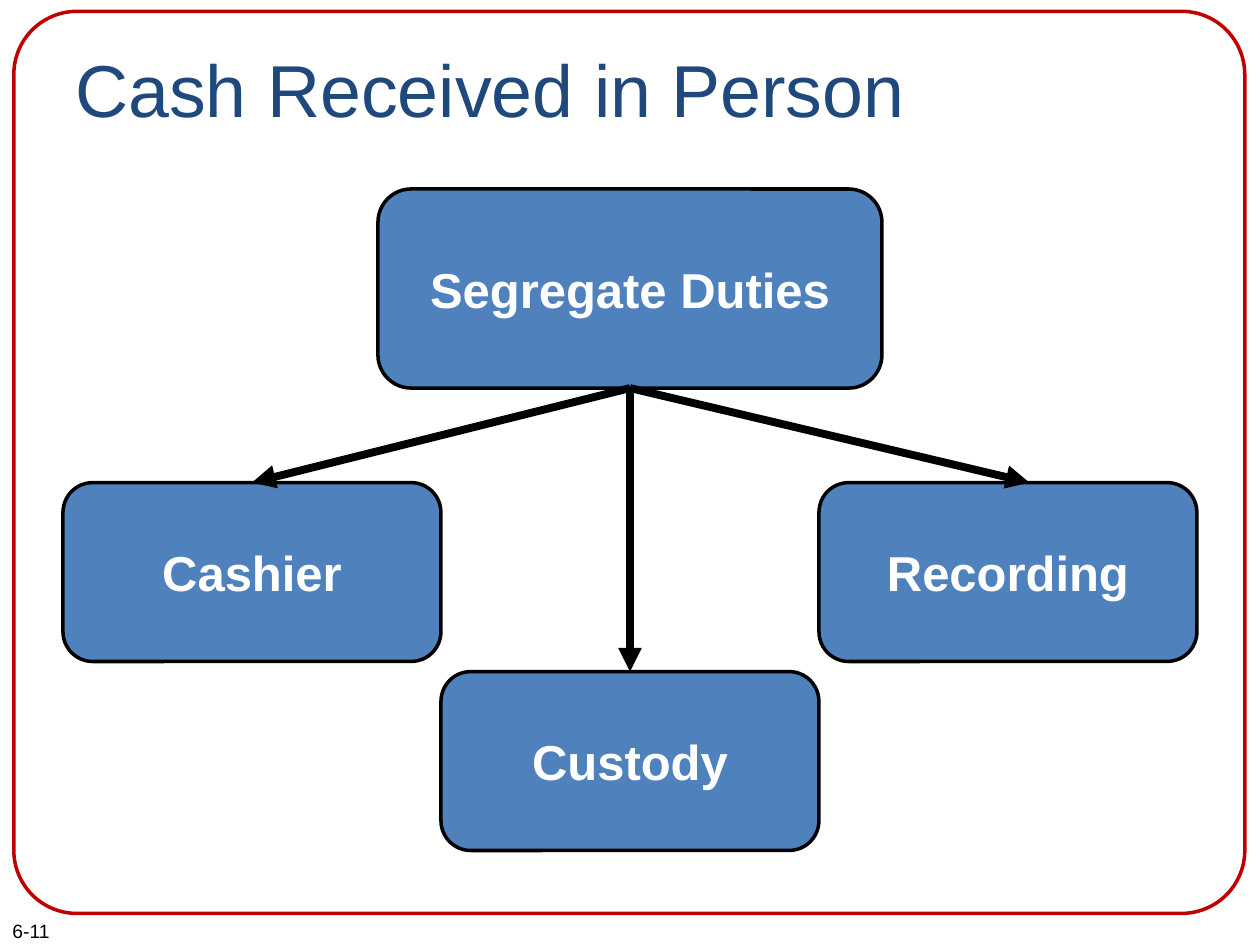
from pptx import Presentation
from pptx.dml.color import RGBColor
from pptx.enum.shapes import MSO_CONNECTOR, MSO_SHAPE
from pptx.enum.text import MSO_ANCHOR, PP_ALIGN
from pptx.oxml.ns import qn
from pptx.util import Inches, Pt
from lxml import etree

# Content: boxes are left, top, width, height in inches
TITLE = ("Cash Received in Person", (0.5, 0.3, 9, 1.25))
PAGE_NUMBER = ("6-11", (0, 7.25, 1.42, 0.29))
FRAME = (0.11, 0.09, 9.77, 7.16)
PARENT = ("Segregate Duties", (3, 1.5, 4, 1.58))

# Duties sit side by side: name, top, x of the arrow tip
DUTIES = [("Cashier", 3.83, 2), ("Custody", 5.33, 5), ("Recording", 3.83, 8.17)]
DUTY_LEFT, DUTY_WIDTH, DUTY_HEIGHT = 0.5, 3, 1.42

THEME = {
    "font": "Arial",
    "title": "1F497D", "frame": "C00000", "box": "4F81BD",
    "ink": "000000", "box_text": "FFFFFF",
    "title_size": 42, "box_size": 28, "page_size": 11,
    "outline": 2, "arrow": 4.5,
}


def color(name):
    return RGBColor.from_string(THEME[name])


def write(shape, text, size, ink, bold=False):
    shape.text_frame.word_wrap = True
    paragraph = shape.text_frame.paragraphs[0]
    run = paragraph.add_run()
    run.text = text
    run.font.name = THEME["font"]
    run.font.size = Pt(THEME[size])
    run.font.bold = bold
    run.font.color.rgb = color(ink)
    return paragraph


def add_text(slide, text, bounds, size, ink):
    write(slide.shapes.add_textbox(*map(Inches, bounds)), text, size, ink)


def add_rounded(slide, bounds, line, fill=None):
    shape = slide.shapes.add_shape(MSO_SHAPE.ROUNDED_RECTANGLE, *map(Inches, bounds))
    shape.shadow.inherit = False
    shape.line.color.rgb = color(line)
    shape.line.width = Pt(THEME["outline"])
    if fill:
        shape.fill.solid()
        shape.fill.fore_color.rgb = color(fill)
    else:
        shape.fill.background()
    return shape


def add_box(slide, text, bounds):
    shape = add_rounded(slide, bounds, "ink", "box")
    shape.text_frame.vertical_anchor = MSO_ANCHOR.MIDDLE
    paragraph = write(shape, text, "box_size", "box_text", bold=True)
    paragraph.alignment = PP_ALIGN.CENTER


def add_arrow(slide, start, end):
    arrow = slide.shapes.add_connector(MSO_CONNECTOR.STRAIGHT, *map(Inches, start + end))
    arrow.line.color.rgb = color("ink")
    arrow.line.width = Pt(THEME["arrow"])
    etree.SubElement(arrow.line._get_or_add_ln(), qn("a:tailEnd"), type="triangle")
    etree.SubElement(arrow._element.spPr, qn("a:effectLst"))


def main():
    presentation = Presentation()
    presentation.slide_width, presentation.slide_height = Inches(10), Inches(7.5)
    slide = presentation.slides.add_slide(presentation.slide_layouts[6])

    # Page number, border and title
    add_text(slide, *PAGE_NUMBER, "page_size", "ink")
    add_rounded(slide, FRAME, "frame").adjustments[0] = 0.07
    add_text(slide, *TITLE, "title_size", "title")

    # Parent box and the duties below it
    add_box(slide, *PARENT)
    for column, (name, top, _) in enumerate(DUTIES):
        left = DUTY_LEFT + column * DUTY_WIDTH
        add_box(slide, name, (left, top, DUTY_WIDTH, DUTY_HEIGHT))

    # Arrows from the bottom centre of the parent
    left, top, width, height = PARENT[1]
    start = (left + width / 2, top + height)
    for _, duty_top, tip in DUTIES:
        add_arrow(slide, start, (tip, duty_top))

    presentation.save("out.pptx")


if __name__ == "__main__":
    main()
